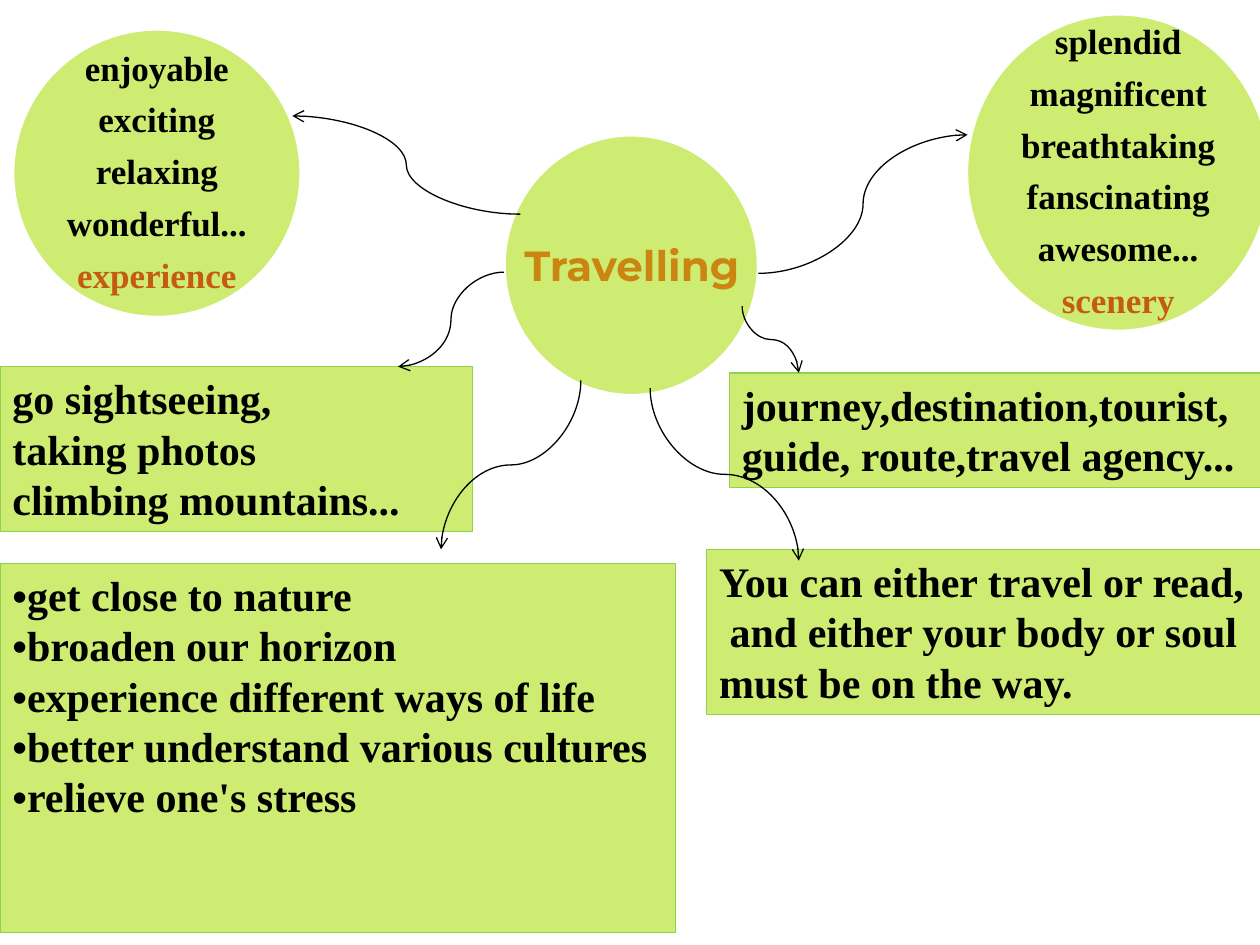
"""Build a mind map slide of words about travelling."""
import dataclasses

import lxml.etree
import pptx
import pptx.dml.color
import pptx.enum.shapes
import pptx.enum.text
import pptx.oxml.ns
import pptx.util


@dataclasses.dataclass(frozen=True)
class Theme:
    fill: str = "CEEC72"
    edge: str = "92D050"
    rim: str = "FFFFFF"
    ink: str = "000000"
    title: str = "CB8611"
    noun: str = "C55A11"
    serif: str = "Times New Roman"
    sans: str = "Montserrat"
    big: int = 24
    small: int = 20
    gap: int = 8
    thin: float = 0.75
    thick: float = 2


theme = Theme()
color = pptx.dml.color.RGBColor.from_string
kinds = pptx.enum.shapes.MSO_SHAPE
align = pptx.enum.text.PP_ALIGN
qn = pptx.oxml.ns.qn

deck = pptx.Presentation()
deck.slide_width = pptx.util.Inches(10)
deck.slide_height = pptx.util.Inches(7.5)
slide = deck.slides.add_slide(deck.slide_layouts[6])
col = deck.slide_width / 100
row = deck.slide_height / 75


def draw(kind, box, edge, width):
    left, top, wide, high = box
    shape = slide.shapes.add_shape(
        kind, int(left * col), int(top * row), int(wide * col), int(high * row))
    shape.shadow.inherit = False
    shape.fill.solid()
    shape.fill.fore_color.rgb = color(theme.fill)
    shape.line.color.rgb = color(edge)
    shape.line.width = pptx.util.Pt(width)
    return shape


def write(shape, text, size, side, font=theme.serif, ink=theme.ink):
    frame = shape.text_frame
    frame.text = text
    for para in frame.paragraphs:
        para.alignment = side
        for run in para.runs:
            run.font.name = font
            run.font.size = pptx.util.Pt(size)
            run.font.bold = True
            run.font.color.rgb = color(ink)
    return frame


draw(kinds.OVAL, (40, 10.7, 20.2, 20.7), theme.rim, theme.thick)
title = slide.shapes.add_textbox(
    int(36.9 * col), int(18.5 * row), int(26.5 * col), int(5 * row))
frame = write(title, "Travelling", theme.big, align.CENTER, theme.sans, theme.title)
frame.word_wrap = True

cards = [
    ((56.1, 43.6, 44.6, 13.1),
     "You can either travel or read,\n and either your body or soul\nmust be on the way."),
    ((0, 29.1, 37.5, 13.1), "go sightseeing,\ntaking photos\nclimbing mountains..."),
    ((57.9, 29.6, 42.9, 9.1),
     "journey,destination,tourist, guide, route,travel agency..."),
    ((0, 44.7, 53.6, 29.3),
     "•get close to nature\n•broaden our horizon\n•experience different ways of life\n"
     "•better understand various cultures\n•relieve one's stress"),
]
for box, text in cards:
    card = draw(kinds.RECTANGLE, box, theme.edge, theme.thin)
    frame = write(card, text, theme.big, align.LEFT)
    frame.word_wrap = True
    frame.vertical_anchor = pptx.enum.text.MSO_ANCHOR.TOP

rounds = [
    ((1, 2.3, 22.9, 22.9), "enjoyable\nexciting\nrelaxing\nwonderful...\nexperience"),
    ((76.7, 1.1, 24.1, 25.2),
     "splendid\nmagnificent\nbreathtaking\nfanscinating\nawesome...\nscenery"),
]
for box, text in rounds:
    disc = draw(kinds.OVAL, box, theme.rim, theme.thick)
    frame = write(disc, text, theme.small, align.CENTER)
    frame.word_wrap = False
    frame.vertical_anchor = pptx.enum.text.MSO_ANCHOR.MIDDLE
    frame.margin_left = frame.margin_right = 0
    frame.margin_top = frame.margin_bottom = 0
    for para in frame.paragraphs:
        para.line_spacing = 0.9
        para.space_after = pptx.util.Pt(theme.gap)
    frame.paragraphs[-1].runs[0].font.color.rgb = color(theme.noun)

curves = [
    ((60.2, 21.7), (76.8, 10.7), False),
    ((41.3, 17), (23.2, 9.2), False),
    ((40, 21.6), (31.6, 29.1), False),
    ((58.9, 24.3), (63.4, 29.6), True),
    ((46.1, 30.2), (35, 43.6), True),
    ((51.6, 30.8), (63.4, 44.5), True),
]
for start, end, steep in curves:
    ax, ay = start[0] * col, start[1] * row
    bx, by = end[0] * col, end[1] * row
    if steep:
        midx, midy = (ax + bx) / 2, (ay + by) / 2
        dx, dy = (bx - ax) / 2, (by - ay) / 2
        ax, ay, bx, by = midx - dy, midy + dx, midx + dy, midy - dx
    curve = slide.shapes.add_connector(
        pptx.enum.shapes.MSO_CONNECTOR.CURVE, int(ax), int(ay), int(bx), int(by))
    curve.line.color.rgb = color(theme.ink)
    curve.line.width = pptx.util.Pt(theme.thin)
    props = curve._element.spPr
    if steep:
        props.find(qn("a:xfrm")).set("rot", "5400000")
    lxml.etree.SubElement(props.find(qn("a:ln")), qn("a:tailEnd"), type="arrow")
    lxml.etree.SubElement(props, qn("a:effectLst"))

deck.save("out.pptx")
